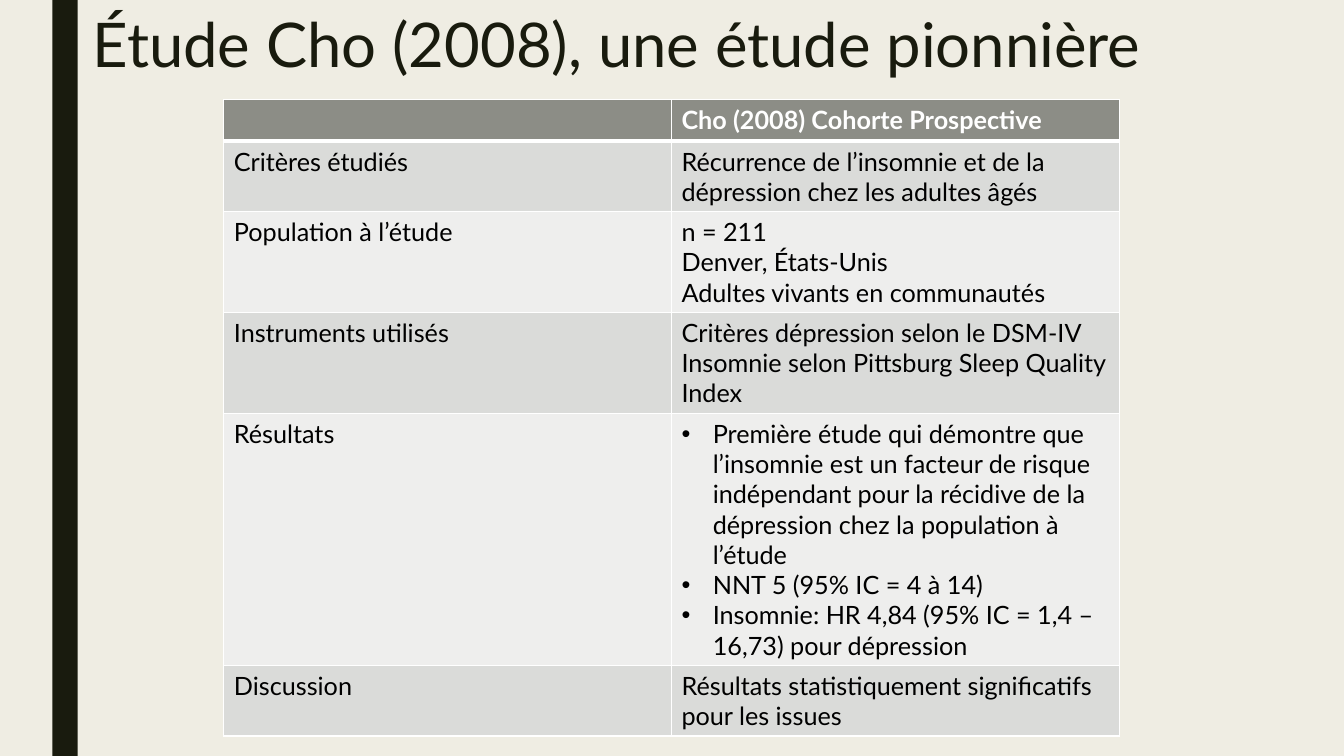
from lxml import etree
from pptx import Presentation
from pptx.dml.color import RGBColor
from pptx.enum.shapes import MSO_SHAPE
from pptx.enum.text import MSO_ANCHOR, MSO_AUTO_SIZE, PP_ALIGN
from pptx.oxml.ns import qn
from pptx.util import Inches, Pt

RECT = MSO_SHAPE.RECTANGLE
TOP = MSO_ANCHOR.TOP
LEFT = PP_ALIGN.LEFT
NO_FIT = MSO_AUTO_SIZE.NONE

FONT = "Lato"
CREAM = RGBColor(0xEF, 0xED, 0xE3)
DARK = RGBColor(0x19, 0x1B, 0x0E)
HEAD = RGBColor(0x8C, 0x8D, 0x86)
BANDS = [RGBColor(0xEE, 0xEE, 0xED), RGBColor(0xDA, 0xDB, 0xD9)]
WHITE = RGBColor(0xFF, 0xFF, 0xFF)
BLACK = RGBColor(0, 0, 0)


def write(frame, lines, size=18, color=BLACK, bold=False, bullet=False, space=None):
    """Fill a text frame with one paragraph per line."""
    for i, line in enumerate(lines):
        para = frame.paragraphs[0] if i == 0 else frame.add_paragraph()
        para.alignment = LEFT
        if space:
            para.line_spacing = space
        if bullet:
            props = para._p.get_or_add_pPr()
            props.set("marL", str(Inches(0.31)))
            props.set("indent", str(-Inches(0.31)))
            etree.SubElement(props, qn("a:buFont"), typeface="Arial")
            etree.SubElement(props, qn("a:buChar"), char="•")
        run = para.add_run()
        run.text = line
        run.font.name = FONT
        run.font.size = Pt(size)
        run.font.bold = bold
        run.font.color.rgb = color


def border(cell, side, width):
    """Draw one white cell border."""
    line = etree.SubElement(cell._tc.get_or_add_tcPr(), qn("a:ln" + side), w=str(Pt(width)))
    fill = etree.SubElement(line, qn("a:solidFill"))
    etree.SubElement(fill, qn("a:srgbClr"), val=str(WHITE))


deck = Presentation()
deck.slide_width = Inches(13.33)
deck.slide_height = Inches(7.5)
slide = deck.slides.add_slide(deck.slide_layouts[5])

# Background and side bar
slide.background.fill.solid()
slide.background.fill.fore_color.rgb = CREAM
bar = slide.shapes.add_shape(RECT, Inches(0.52), 0, Inches(0.25), Inches(7.5))
bar.shadow.inherit = False
bar.fill.solid()
bar.fill.fore_color.rgb = DARK
bar.line.fill.background()

# Title
title = slide.shapes.title
title.left, title.top = Inches(0.82), Inches(0.1)
title.width, title.height = Inches(11.5), Inches(0.99)
frame = title.text_frame
frame.word_wrap = True
frame.auto_size = NO_FIT
frame.vertical_anchor = TOP
write(frame, ["Étude Cho (2008), une étude pionnière"], size=44, color=DARK, space=0.89)

# Study table: row height, label, lines
ROWS = [
    (0.41, "", ["Cho (2008) Cohorte Prospective"]),
    (0.7, "Critères étudiés",
     ["Récurrence de l’insomnie et de la dépression chez les adultes âgés"]),
    (1, "Population à l’étude",
     ["n = 211", "Denver, États-Unis", "Adultes vivants en communautés"]),
    (1, "Instruments utilisés",
     ["Critères dépression selon le DSM-IV",
      "Insomnie selon Pittsburg Sleep Quality Index"]),
    (2.5, "Résultats",
     ["Première étude qui démontre que l’insomnie est un facteur de risque "
      "indépendant pour la récidive de la dépression chez la population à l’étude",
      "NNT 5 (95% IC = 4 à 14)",
      "Insomnie: HR 4,84 (95% IC = 1,4 – 16,73) pour dépression"]),
    (0.7, "Discussion",
     ["Résultats statistiquement significatifs pour les issues"]),
]
table = slide.shapes.add_table(
    len(ROWS), 2, Inches(2.22), Inches(0.99), Inches(8.89), Inches(6.31)).table
for col in table.columns:
    col.width = Inches(4.44)

for r, (height, label, lines) in enumerate(ROWS):
    table.rows[r].height = Inches(height)
    first = r == 0
    for c, words in enumerate([[label], lines]):
        cell = table.cell(r, c)
        for side in "LRTB":
            thick = (r, side) in [(0, "B"), (1, "T")]
            border(cell, side, 3 if thick else 1)
        cell.fill.solid()
        cell.fill.fore_color.rgb = HEAD if first else BANDS[r % 2]
        if words != [""]:
            write(cell.text_frame, words, color=WHITE if first else BLACK,
                  bold=first, bullet=c == 1 and label == "Résultats")

deck.save("out.pptx")
